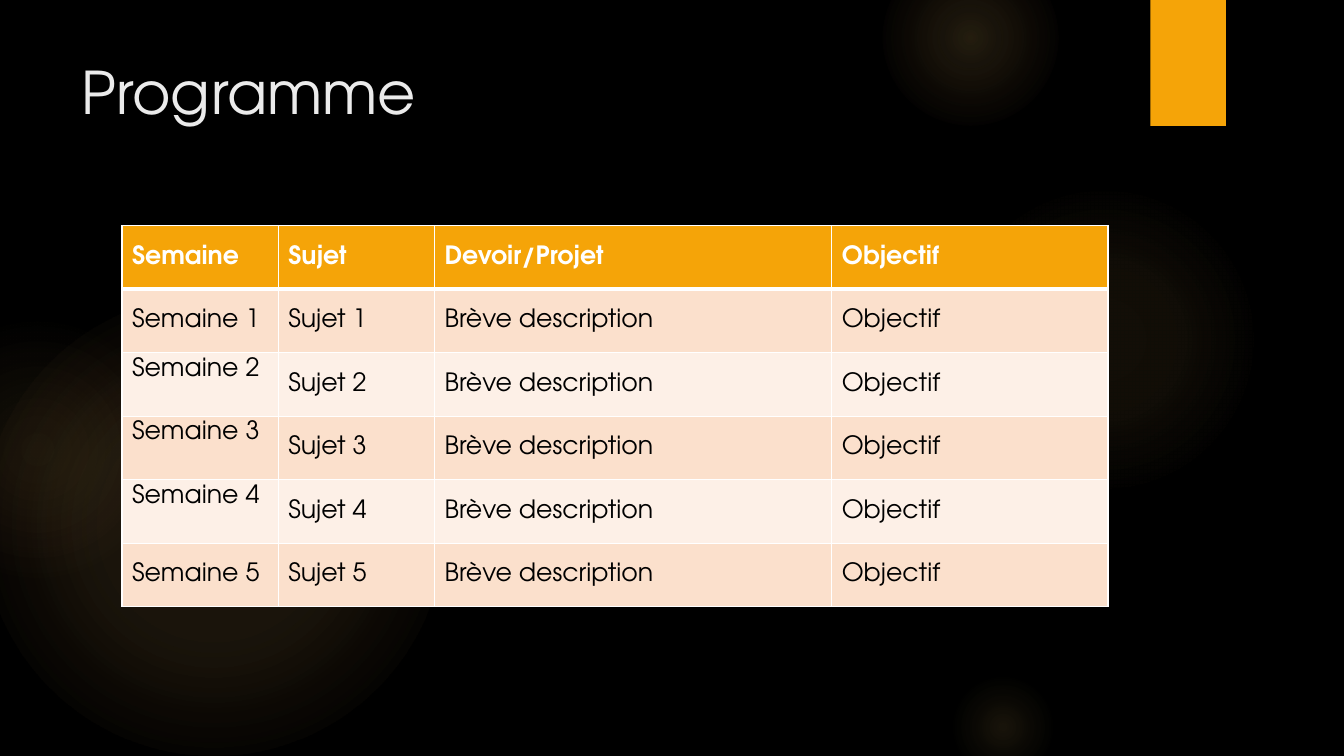
from dataclasses import dataclass

from pptx import Presentation
from pptx.dml.color import RGBColor as Rgb
from pptx.enum.shapes import MSO_SHAPE as Kind
from pptx.enum.text import MSO_ANCHOR as Anchor
from pptx.oxml import parse_xml
from pptx.oxml.ns import nsdecls, qn
from pptx.util import Inches, Pt


@dataclass(frozen=True)
class Theme:
    font: str = "TeX Gyre Adventor"
    back: str = "000000"
    title: str = "EBEBEB"
    accent: str = "F5A408"
    glow: str = "FAC96A"
    warm: str = "F59B74"
    white: str = "FFFFFF"
    ink: str = "000000"
    bands: tuple = ("FBE0CC", "FDF0E7")
    big: int = 42
    body: int = 18


def color(code):
    return Rgb.from_string(code)


class Deck:
    def __init__(self, theme):
        self.theme = theme
        self.file = Presentation()
        self.file.slide_width = Inches(13.33)
        self.file.slide_height = Inches(7.5)
        self.slide = self.file.slides.add_slide(self.file.slide_layouts[6])
        fill = self.slide.background.fill
        fill.solid()
        fill.fore_color.rgb = color(theme.back)

    def shape(self, kind, left, top, width, height, fill):
        item = self.slide.shapes.add_shape(
            kind, Inches(left), Inches(top), Inches(width), Inches(height))
        item.shadow.inherit = False
        item.line.fill.background()
        item.fill.solid()
        item.fill.fore_color.rgb = color(fill)
        return item

    def glow(self, left, top, size, stops):
        """Round light that fades out; stops are (place %, colour, alpha %)."""
        disc = self.shape(Kind.OVAL, left, top, size, size, self.theme.glow)
        marks = "".join(
            f'<a:gs pos="{place * 1000}"><a:srgbClr val="{tone}">'
            f'<a:alpha val="{alpha * 1000}"/></a:srgbClr></a:gs>'
            for place, tone, alpha in stops)
        grad = parse_xml(
            f'<a:gradFill {nsdecls("a")} rotWithShape="1"><a:gsLst>{marks}</a:gsLst>'
            '<a:path path="circle"><a:fillToRect l="50000" t="50000" '
            'r="50000" b="50000"/></a:path></a:gradFill>')
        props = disc.element.spPr
        props.replace(props.find(qn("a:solidFill")), grad)

    def tab(self, left, top, width, height):
        """Accent block with a soft shadow below."""
        block = self.shape(Kind.RECTANGLE, left, top, width, height, self.theme.accent)
        block.element.spPr.find(qn("a:effectLst")).append(parse_xml(
            f'<a:outerShdw {nsdecls("a")} blurRad="{Pt(3)}" dist="{Pt(2)}" '
            'dir="5400000" rotWithShape="0"><a:srgbClr val="000000">'
            '<a:alpha val="45000"/></a:srgbClr></a:outerShdw>'))

    def label(self, frame, text, size, tone, bold=False):
        run = frame.paragraphs[0].add_run()
        run.text = text
        run.font.name = self.theme.font
        run.font.size = Pt(size)
        run.font.bold = bold
        run.font.color.rgb = color(tone)

    def title(self, left, top, width, height, text):
        frame = self.slide.shapes.add_textbox(
            Inches(left), Inches(top), Inches(width), Inches(height)).text_frame
        frame.word_wrap = True
        frame.vertical_anchor = Anchor.TOP
        self.label(frame, text, self.theme.big, self.theme.title)

    def edge(self, cell, widths):
        """Cell borders, in the order left, right, top, bottom."""
        props = cell._tc.get_or_add_tcPr()
        for spot, (side, width) in enumerate(zip("LRTB", widths)):
            props.insert(spot, parse_xml(
                f'<a:ln{side} {nsdecls("a")} w="{Pt(width)}"><a:solidFill>'
                f'<a:srgbClr val="{self.theme.white}"/></a:solidFill></a:ln{side}>'))

    def table(self, left, top, cols, height, rows, high):
        """Table with a header; high holds the (row, column) of top-set cells."""
        look = self.theme
        grid = self.slide.shapes.add_table(
            len(rows), len(cols), Inches(left), Inches(top),
            Inches(sum(cols)), Inches(height * len(rows))).table
        for col, width in zip(grid.columns, cols):
            col.width = Inches(width)
        for r, row in enumerate(rows):
            grid.rows[r].height = Inches(height)
            head = r == 0
            for c, text in enumerate(row):
                cell = grid.cell(r, c)
                cell.vertical_anchor = Anchor.TOP if (r, c) in high else Anchor.MIDDLE
                cell.fill.solid()
                cell.fill.fore_color.rgb = color(
                    look.accent if head else look.bands[(r - 1) % 2])
                self.edge(cell, (1, 1, 3 if r == 1 else 1, 3 if head else 1))
                self.label(cell.text_frame, text, look.body,
                           look.white if head else look.ink, head)

    def save(self):
        self.file.save("out.pptx")


def main():
    theme = Theme()
    deck = Deck(theme)

    # Background lights: left, top, size, alphas, middle and end stops, end colour
    lights = [
        (-0.17, 2.92, 4.58, (11, 10), 36, 75, theme.glow),
        (-0.92, 3.17, 2.58, (8, 5), 36, 71, theme.warm),
        (9.41, 1.83, 3.08, (7, 6), 36, 69, theme.glow),
        (8.75, -0.5, 1.75, (14, 7), 36, 73, theme.glow),
        (9.41, 6.67, 1.08, (10, 5), 31, 66, theme.glow),
    ]
    for left, top, size, (core, ring), mid, end, tone in lights:
        deck.glow(left, top, size,
                  [(0, theme.glow, core), (mid, theme.glow, ring), (end, tone, 0)])

    # Accent block and title
    deck.tab(11.41, 0, 0.75, 1.25)
    deck.title(0.71, 0.5, 10.29, 1.53, "Programme")

    # Weekly schedule
    rows = [("Semaine", "Sujet", "Devoir/Projet", "Objectif")]
    rows += [(f"Semaine {n}", f"Sujet {n}", "Brève description", "Objectif")
             for n in range(1, 6)]
    deck.table(1.21, 2.24, (1.55, 1.55, 3.94, 2.74), 0.63, rows,
               high={(n, 0) for n in (2, 3, 4)})

    deck.save()


if __name__ == "__main__":
    main()
